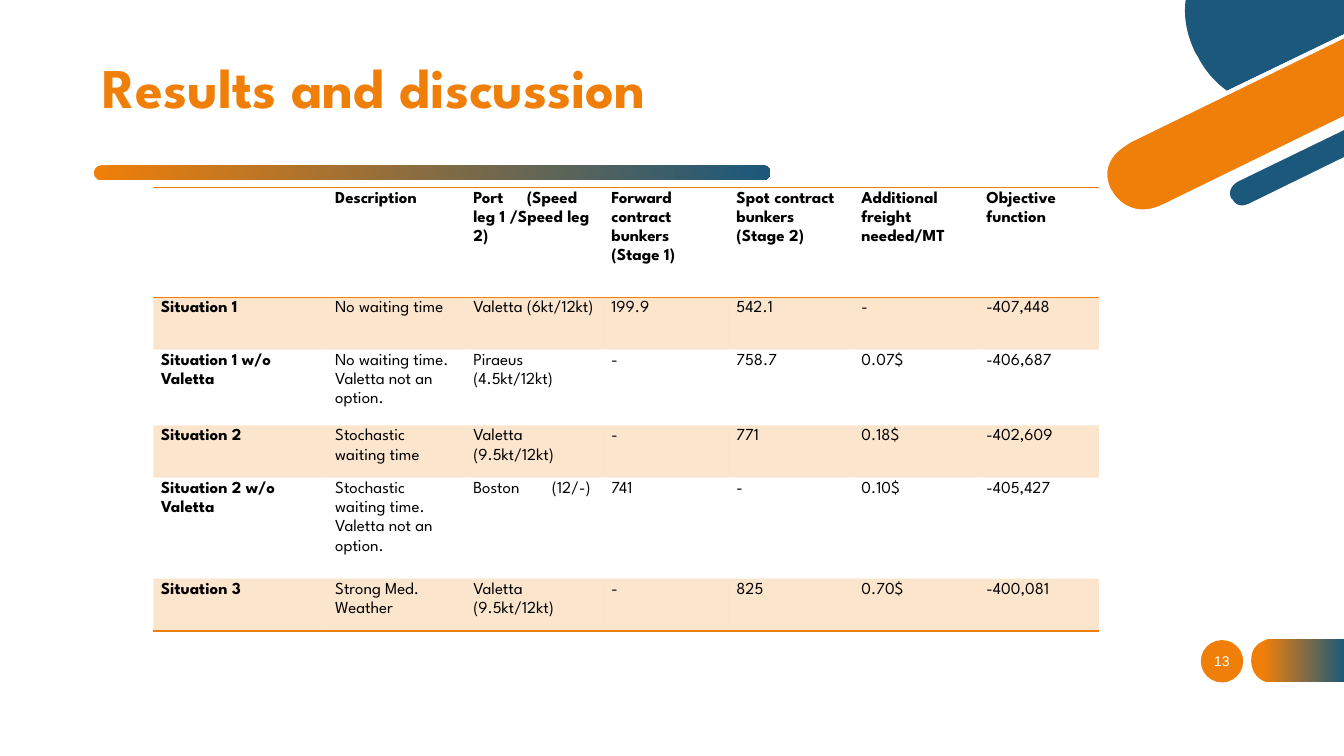
from lxml import etree
from pptx import Presentation
from pptx import util as u
from pptx.dml import color
from pptx.enum import shapes, text
from pptx.oxml import ns

PX = 9144  # one px is a hundredth of an inch
ORANGE, BLUE, WHITE, BLACK = "F07F09", "1B587C", "FFFFFF", "000000"
HEADING_FONT = "League Spartan"
PLAIN_STYLE = "{2D5ABB26-0587-4C30-8999-92F81FD0307C}"

COLUMNS = [173, 137, 137, 124, 124, 124, 119]
ROWS = [109] + [52] * 5
RESULTS = [
    ["", "Description", "Port\t(Speed leg 1 /Speed leg 2)", "Forward contract bunkers (Stage 1)",
     "Spot contract bunkers (Stage 2)", "Additional freight needed/MT", "Objective function"],
    ["Situation 1", "No waiting time", "Valetta (6kt/12kt)", "199.9", "542.1", "-", "-407,448"],
    ["Situation 1 w/o Valetta", "No waiting time. Valetta not an option.", "Piraeus (4.5kt/12kt)",
     "-", "758.7", "0.07$", "-406,687"],
    ["Situation 2", "Stochastic waiting time", "Valetta (9.5kt/12kt)", "-", "771", "0.18$", "-402,609"],
    ["Situation 2 w/o Valetta", "Stochastic waiting time. Valetta not an option.", "Boston\t(12/-)",
     "741", "-", "0.10$", "-405,427"],
    ["Situation 3", "Strong Med. Weather", "Valetta (9.5kt/12kt)", "-", "825", "0.70$", "-400,081"],
]
TAB_STOPS = {0: 53, 4: 78}

# Outlines within the corner box: two numbers are a line, six are a curve.
CORNER = [
    (WHITE, [(239, 81), (212, 94), (180, 110, 150, 108, 125, 89), (105, 74, 95, 55, 95, 55), (94, 52),
             (85, 34, 81, 16, 84, 0), (80, 0), (77, 17, 81, 35, 90, 54), (92, 57),
             (92, 58, 102, 77, 122, 92), (134, 101, 150, 109, 171, 109),
             (183, 109, 197, 106, 214, 98), (239, 86)]),
    (ORANGE, [(27, 139), (27, 139, -9, 157, 7, 189), (7, 190), (7, 190, 23, 222, 60, 204),
              (239, 117), (239, 36)]),
    (BLUE, [(94, 56), (94, 56, 103, 76, 123, 90), (239, 34), (239, 0), (82, 0),
            (80, 15, 82, 33, 92, 53)]),
    (BLUE, [(239, 126), (133, 178), (133, 178, 119, 185, 126, 197), (126, 198),
            (126, 198, 132, 211, 146, 204), (239, 158)]),
    (WHITE, [(145, 202), (133, 208, 128, 198, 128, 197), (127, 197), (122, 186, 134, 180, 134, 180),
             (239, 129), (239, 124), (132, 176), (132, 176, 125, 180, 123, 187),
             (121, 191, 122, 195, 124, 199), (126, 203, 131, 208, 138, 208),
             (141, 208, 144, 208, 147, 206), (239, 161), (239, 156)]),
    (WHITE, [(59, 203), (25, 219, 9, 190, 9, 189), (8, 188), (2, 175, 3, 164, 12, 153),
             (19, 146, 28, 141, 28, 141), (239, 38), (239, 34), (26, 137),
             (25, 138, 8, 146, 2, 163), (-1, 171, 0, 180, 5, 190), (5, 191),
             (5, 191, 16, 212, 39, 212), (45, 212, 52, 210, 60, 206), (239, 119), (239, 115)]),
]
PAGE_TAB = [(21, 43), (93, 43), (93, 0), (21, 0), (21, 0, 0, 0, 0, 21), (0, 22), (0, 22, 0, 43, 21, 43)]


def emu(*lengths):
    return [u.Emu(length * PX) for length in lengths]


def paint(fill, *colours, start=0):
    """Fill with one colour, or with a left-to-right gradient of two."""
    if len(colours) == 1:
        fill.solid()
        fill.fore_color.rgb = color.RGBColor.from_string(colours[0])
        return
    fill.gradient()
    fill.gradient_angle = 0
    for stop, colour, position in zip(fill.gradient_stops, colours, (start, 1)):
        stop.color.rgb = color.RGBColor.from_string(colour)
        stop.position = position


def apply(target, formats):
    for name, value in formats.items():
        setattr(target, name, value)


def add_child(parent, tag, **attributes):
    return etree.SubElement(parent, ns.qn(tag), attributes)


def finish(shape, *colours, start=0):
    shape.shadow.inherit = False
    shape.line.fill.background()
    paint(shape.fill, *colours, start=start)


def draw_outline(page, left, top, steps, *colours, start=0):
    """Draw straight segments between the step ends, then bend those that are curves."""
    ends = [tuple(emu(left + step[-2], top + step[-1])) for step in steps]
    builder = page.shapes.build_freeform(*ends[0])
    builder.add_line_segments(ends[1:], close=True)
    shape = builder.convert_to_shape()
    segments = list(shape.element.iter(ns.qn("a:lnTo")))
    for segment, step in zip(segments, steps[1:]):
        if len(step) == 6:
            curve = etree.Element(ns.qn("a:cubicBezTo"))
            for x, y in zip(step[::2], step[1::2]):
                across, down = emu(left + x, top + y)
                add_child(curve, "a:pt", x=str(across - shape.left), y=str(down - shape.top))
            segment.getparent().replace(segment, curve)
    finish(shape, *colours, start=start)


def draw_corner(page, left, top):
    for colour, steps in CORNER:
        draw_outline(page, left, top, steps, colour)


def draw_title(page, left, top, width, height):
    title = page.shapes.title
    apply(title, dict(zip(("left", "top", "width", "height"), emu(left, top, width, height))))
    frame = title.text_frame
    apply(frame, {"vertical_anchor": text.MSO_ANCHOR.MIDDLE, "word_wrap": True,
                  "auto_size": text.MSO_AUTO_SIZE.NONE})
    para = frame.paragraphs[0]
    apply(para, {"alignment": text.PP_ALIGN.LEFT, "line_spacing": 0.9})
    span = para.add_run()
    span.text = "Results and discussion"
    apply(span.font, {"name": HEADING_FONT, "size": u.Pt(40), "bold": True})
    paint(span.font.fill, ORANGE, BLUE)
    bar = page.shapes.add_shape(shapes.MSO_SHAPE.ROUNDED_RECTANGLE, *emu(left + 1, top + 126, 671, 15))
    bar.adjustments[0] = 0.5
    finish(bar, ORANGE, BLUE)


def draw_page_number(page, left, top):
    finish(page.shapes.add_shape(shapes.MSO_SHAPE.OVAL, *emu(left, top, 42, 42)), ORANGE)
    draw_outline(page, left + 50, top - 1, PAGE_TAB, ORANGE, BLUE, start=0.12)
    box = page.shapes.add_textbox(*emu(left - 9, top + 1, 60, 40))
    apply(box.text_frame, {"word_wrap": True, "vertical_anchor": text.MSO_ANCHOR.MIDDLE})
    para = box.text_frame.paragraphs[0]
    para.alignment = text.PP_ALIGN.CENTER
    span = para.add_run()
    span.text = "13"
    apply(span.font, {"name": "Arial", "size": u.Pt(10)})
    paint(span.font.fill, WHITE)


def format_cell(cell, words, bold, edges, banded, tab_stop):
    apply(cell, {"margin_left": u.Pt(5.4), "margin_top": 0, "margin_right": u.Pt(5.4), "margin_bottom": 0})
    properties = cell._tc.get_or_add_tcPr()
    for edge in edges:
        line = add_child(properties, edge, w=str(u.Pt(1)))
        add_child(add_child(line, "a:solidFill"), "a:srgbClr", val=ORANGE)
    if banded:
        paint(cell.fill, ORANGE)
        add_child(properties[-1][0], "a:alpha", val="20000")
    else:
        cell.fill.background()
    para = cell.text_frame.paragraphs[0]
    if tab_stop:
        tabs = add_child(para._p.get_or_add_pPr(), "a:tabLst")
        add_child(tabs, "a:tab", pos=str(tab_stop * PX), algn="l")
    apply(para, {"line_spacing": 1.25, "space_after": u.Pt(10)})
    if words:
        span = para.add_run()
        span.text = words
        apply(span.font, {"name": HEADING_FONT, "size": u.Pt(12), "bold": bold})
        paint(span.font.fill, BLACK)
    ending = add_child(para._p, "a:endParaRPr", sz="1200")
    add_child(ending, "a:latin", typeface=HEADING_FONT)


def draw_results(page, left, top, height):
    frame = page.shapes.add_table(len(ROWS), len(COLUMNS), *emu(left, top, sum(COLUMNS), height))
    frame.element.find(".//" + ns.qn("a:tableStyleId")).text = PLAIN_STYLE
    table = frame.table
    for column, width in zip(table.columns, COLUMNS):
        column.width = emu(width)[0]
    for r, (row, row_height) in enumerate(zip(table.rows, ROWS)):
        row.height = emu(row_height)[0]
        edges = {0: ["a:lnT", "a:lnB"], len(ROWS) - 1: ["a:lnB"]}.get(r, [])
        for c, words in enumerate(RESULTS[r]):
            tab_stop = TAB_STOPS.get(r) if c == 2 else None
            format_cell(table.cell(r, c), words, r == 0 or c == 0, edges, r % 2 == 1, tab_stop)
    frame.height = emu(height)[0]


def main():
    deck = Presentation()
    deck.slide_width, deck.slide_height = emu(1333, 750)
    page = deck.slides.add_slide(deck.slide_layouts[5])
    draw_corner(page, 1094, 0)
    draw_title(page, 92, 38, 990, 103)
    draw_page_number(page, 1191, 635)
    draw_results(page, 152, 186, 438)
    deck.save("out.pptx")


if __name__ == "__main__":
    main()
